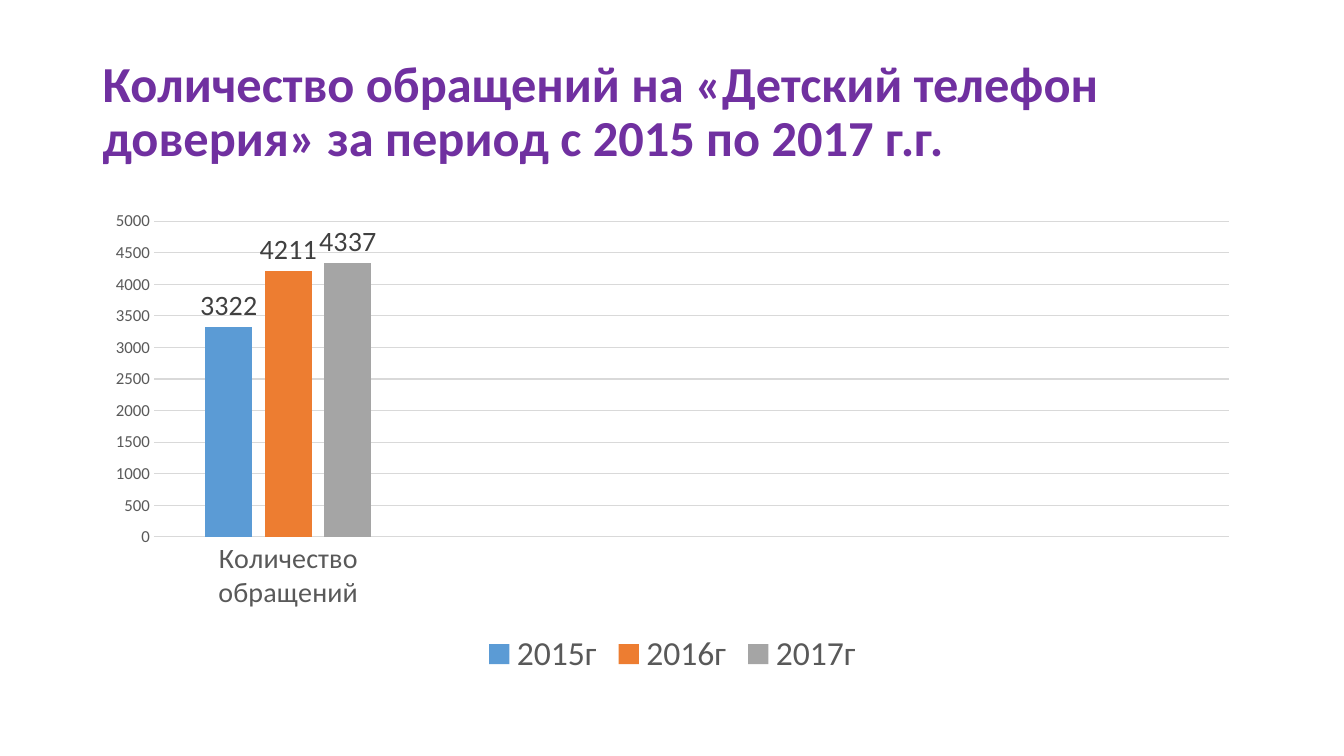
from dataclasses import dataclass

from pptx import Presentation
from pptx.chart.data import CategoryChartData
from pptx.dml.color import RGBColor
from pptx.enum.chart import (
    XL_CHART_TYPE,
    XL_LABEL_POSITION,
    XL_LEGEND_POSITION,
    XL_TICK_MARK,
)
from pptx.enum.text import MSO_ANCHOR
from pptx.util import Inches, Pt

COLUMNS = XL_CHART_TYPE.COLUMN_CLUSTERED
OUTSIDE = XL_LABEL_POSITION.OUTSIDE_END
BOTTOM = XL_LEGEND_POSITION.BOTTOM
NO_TICK = XL_TICK_MARK.NONE
MIDDLE = MSO_ANCHOR.MIDDLE

WIDTH, HEIGHT = Inches(13.33), Inches(7.5)
TITLE = "Количество обращений на «Детский телефон доверия» за период с 2015 по 2017 г.г."
GROUPS = ["Количество обращений", "", "", ""]
CALLS = {"2015г": 3322, "2016г": 4211, "2017г": 4337}


@dataclass(frozen=True)
class Theme:
    face: str = "Calibri"
    title: str = "7030A0"
    text: str = "595959"
    label: str = "404040"
    grid: str = "D9D9D9"
    bars: tuple = ("5B9BD5", "ED7D31", "A5A5A5")
    head: int = 36
    key: int = 24
    group: int = 20
    scale: int = 12
    base: int = 10
    rule: float = 0.75


THEME = Theme()


def apply(target, values):
    for name, value in values.items():
        setattr(target, name, value)


def style(font, size, color, bold=False):
    apply(font, {"name": THEME.face, "size": Pt(size), "bold": bold})
    font.color.rgb = RGBColor.from_string(color)


def rule(line):
    line.width = Pt(THEME.rule)
    line.color.rgb = RGBColor.from_string(THEME.grid)


def place(left, top, width, height):
    return (
        round(left * WIDTH),
        round(top * HEIGHT),
        round(width * WIDTH),
        round(height * HEIGHT),
    )


def add_title(slide, box):
    frame = slide.shapes.add_textbox(*box).text_frame
    apply(frame, {"word_wrap": True, "vertical_anchor": MIDDLE})
    line = frame.paragraphs[0]
    line.line_spacing = 0.9
    run = line.add_run()
    run.text = TITLE
    style(run.font, THEME.head, THEME.title, True)


def set_axes(chart):
    groups, scale = chart.category_axis, chart.value_axis
    for axis, size in ((groups, THEME.group), (scale, THEME.scale)):
        apply(axis, {"major_tick_mark": NO_TICK, "minor_tick_mark": NO_TICK})
        style(axis.tick_labels.font, size, THEME.text)
    rule(groups.format.line)
    scale.format.line.fill.background()
    apply(scale, {"minimum_scale": 0, "maximum_scale": 5000, "major_unit": 500})
    rule(scale.major_gridlines.format.line)


def set_bars(plot):
    apply(plot, {"gap_width": 219, "overlap": -27, "vary_by_categories": False})
    for bars, color in zip(plot.series, THEME.bars):
        bars.invert_if_negative = False
        bars.format.fill.solid()
        bars.format.fill.fore_color.rgb = RGBColor.from_string(color)
        labels = bars.data_labels
        apply(labels, {"show_value": True, "position": OUTSIDE})
        style(labels.font, THEME.group, THEME.label)


def add_columns(slide, box):
    data = CategoryChartData()
    data.categories = GROUPS
    blanks = [None] * (len(GROUPS) - 1)
    for year, count in CALLS.items():
        data.add_series(year, [count, *blanks])
    chart = slide.shapes.add_chart(COLUMNS, *box, data).chart
    apply(chart, {"has_title": False, "has_legend": True})
    style(chart.font, THEME.base, "000000")
    apply(chart.legend, {"position": BOTTOM, "include_in_layout": False})
    style(chart.legend.font, THEME.key, THEME.text)
    set_axes(chart)
    set_bars(chart.plots[0])


def main():
    deck = Presentation()
    apply(deck, {"slide_width": WIDTH, "slide_height": HEIGHT})
    slide = deck.slides.add_slide(deck.slide_layouts[6])
    left, width = 0.069, 0.8627
    add_title(slide, place(left, 0.0533, width, 0.1933))
    add_columns(slide, place(left, 0.2667, width, 0.6347))
    deck.save("out.pptx")


if __name__ == "__main__":
    main()
